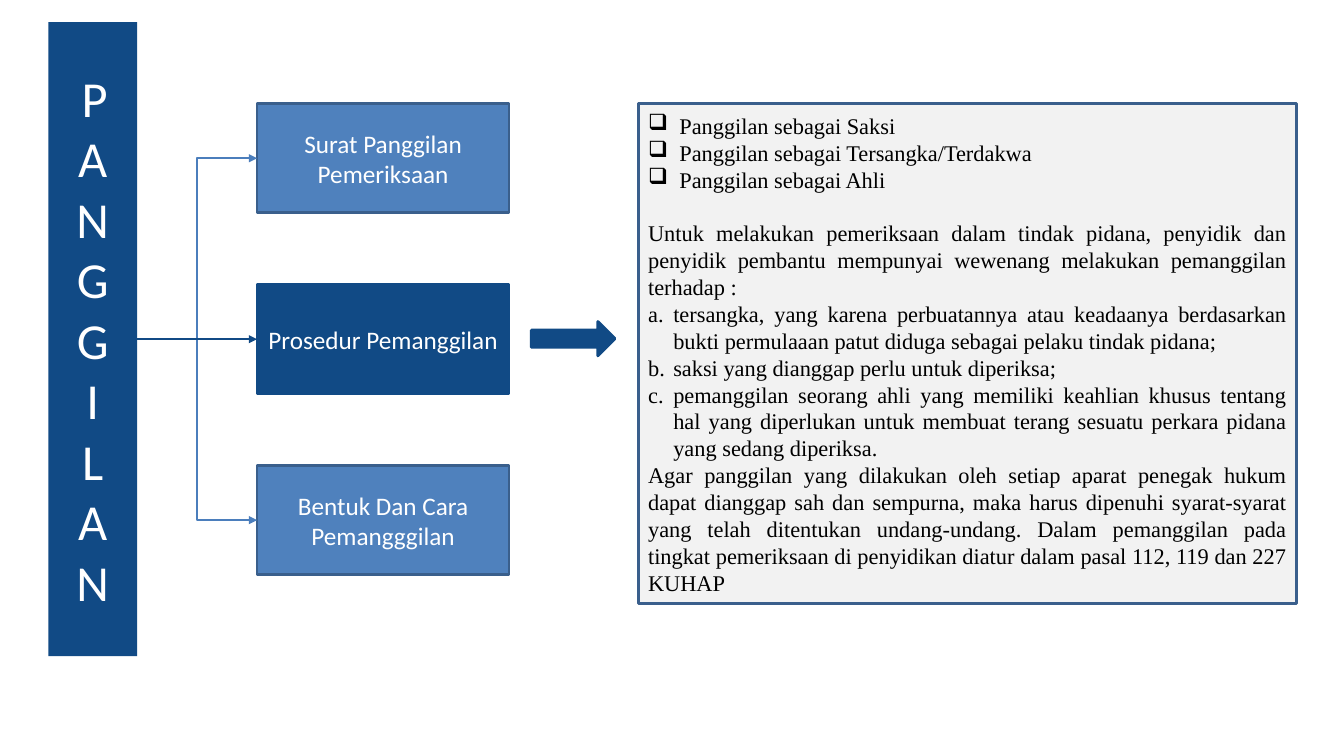
from lxml import etree
from pptx import Presentation
from pptx import util as u
from pptx.dml.color import RGBColor
from pptx.enum import shapes, text
from pptx.oxml import ns

NAVY = RGBColor(0x11, 0x4A, 0x85)
BLUE = RGBColor(0x4F, 0x81, 0xBD)
EDGE = RGBColor(0x3A, 0x5F, 0x8C)
WIRE = RGBColor(0x4B, 0x7E, 0xBC)
PALE = RGBColor(0xF2, 0xF2, 0xF2)
WHITE = RGBColor(0xFF, 0xFF, 0xFF)
BLACK = RGBColor(0, 0, 0)

STEPS = [
    ("Surat Panggilan Pemeriksaan", BLUE, EDGE, WIRE),
    ("Bentuk Dan Cara Pemangggilan", BLUE, EDGE, WIRE),
    ("Prosedur Pemanggilan", NAVY, NAVY, NAVY),
]
ROWS = [0, 2, 1]
CHECK = ("buChar", "char", "❑", 0.31)
LETTER = ("buAutoNum", "type", "alphaLcPeriod", 0.25)
NOTES = [
    (CHECK, "Panggilan sebagai Saksi"),
    (CHECK, "Panggilan sebagai Tersangka/Terdakwa"),
    (CHECK, "Panggilan sebagai Ahli"),
    (None, "Untuk melakukan pemeriksaan dalam tindak pidana, penyidik dan penyidik "
           "pembantu mempunyai wewenang melakukan pemanggilan terhadap :"),
    (LETTER, "tersangka, yang karena perbuatannya atau keadaanya berdasarkan bukti "
             "permulaaan patut diduga sebagai pelaku tindak pidana;"),
    (LETTER, "saksi yang dianggap perlu untuk diperiksa;"),
    (LETTER, "pemanggilan seorang ahli yang memiliki keahlian khusus tentang hal yang "
             "diperlukan untuk membuat terang sesuatu perkara pidana yang sedang diperiksa."),
    (None, "Agar panggilan yang dilakukan oleh setiap aparat penegak hukum dapat dianggap "
           "sah dan sempurna, maka harus dipenuhi syarat-syarat yang telah ditentukan "
           "undang-undang. Dalam pemanggilan pada tingkat pemeriksaan di penyidikan diatur "
           "dalam pasal 112, 119 dan 227 KUHAP"),
]


def add_block(slide, kind, box, fill, edge=None):
    """Add a flat filled shape in a box given in inches."""
    block = slide.shapes.add_shape(kind, *map(u.Inches, box))
    block.shadow.inherit = False
    block.fill.solid()
    block.fill.fore_color.rgb = fill
    if edge is None:
        block.line.fill.background()
    else:
        block.line.color.rgb = edge
        block.line.width = u.Pt(2)
    block.text_frame.word_wrap = True
    block.text_frame.vertical_anchor = text.MSO_ANCHOR.MIDDLE
    return block


def set_style(para, face, size, color, align):
    """Set the font and alignment of a paragraph."""
    para.alignment = align
    para.font.name = face
    para.font.size = u.Pt(size)
    para.font.color.rgb = color


def add_label(block, words, size):
    """Write a centred white label in a block."""
    para = block.text_frame.paragraphs[0]
    para.text = words
    set_style(para, "Calibri", size, WHITE, text.PP_ALIGN.CENTER)


def add_bar(slide, box):
    """Add the upright title bar."""
    bar = add_block(slide, shapes.MSO_SHAPE.RECTANGLE, box, NAVY)
    add_label(bar, "PANGGILAN", 36)
    frame = bar.text_frame
    frame.vertical_anchor = text.MSO_ANCHOR.TOP
    frame.auto_size = text.MSO_AUTO_SIZE.SHAPE_TO_FIT_TEXT
    frame._txBody.bodyPr.set("vert", "wordArtVert")
    return bar


def add_wire(slide, start, end, kind, color):
    """Join the right side of one block to the left side of another."""
    wire = slide.shapes.add_connector(kind, 0, 0, 0, 0)
    wire.begin_connect(start, 3)
    wire.end_connect(end, 1)
    wire.line.color.rgb = color
    wire.line.width = u.Pt(1.5)
    etree.SubElement(wire.line._get_or_add_ln(), ns.qn("a:tailEnd"), type="triangle")
    etree.SubElement(wire._element.spPr, ns.qn("a:effectLst"))


def add_steps(slide, bar, box):
    """Stack three steps evenly in a box and wire them to the bar."""
    left, top, width, height = box
    tall = 1.08
    pitch = (height - tall) / 2
    for row, (words, fill, edge, color) in zip(ROWS, STEPS):
        step = add_block(slide, shapes.MSO_SHAPE.RECTANGLE,
                         (left, top + row * pitch, width, tall), fill, edge)
        add_label(step, words, 18)
        kind = shapes.MSO_CONNECTOR.STRAIGHT if row == 1 else shapes.MSO_CONNECTOR.ELBOW
        add_wire(slide, bar, step, kind, color)


def add_mark(para, mark):
    """Give a paragraph a hanging bullet or letter."""
    tag, key, value, indent = mark
    props = para._p.get_or_add_pPr()
    props.set("marL", str(u.Inches(indent)))
    props.set("indent", str(-u.Inches(indent)))
    etree.SubElement(props, ns.qn("a:" + tag), {key: value})


def add_notes(slide, box):
    """Add the framed panel of notes."""
    panel = add_block(slide, shapes.MSO_SHAPE.RECTANGLE, box, PALE, EDGE)
    frame = panel.text_frame
    last = None
    for index, (mark, words) in enumerate(NOTES):
        para = frame.add_paragraph() if index else frame.paragraphs[0]
        para.text = words
        if mark:
            add_mark(para, mark)
        elif last is CHECK:
            para.space_before = u.Pt(19.2)
        set_style(para, "Times New Roman", 16, BLACK, text.PP_ALIGN.JUSTIFY)
        last = mark


def main():
    """Build and save the slide."""
    deck = Presentation()
    deck.slide_width, deck.slide_height = u.Inches(13.33), u.Inches(7.5)
    slide = deck.slides.add_slide(deck.slide_layouts[6])
    bar = add_bar(slide, (0.48, 0.22, 0.88, 6.29))
    add_steps(slide, bar, (2.55, 1.03, 2.5, 4.67))
    add_notes(slide, (6.33, 1.03, 6.53, 4.96))
    add_block(slide, shapes.MSO_SHAPE.RIGHT_ARROW, (5.27, 3.19, 0.83, 0.34), NAVY, NAVY)
    deck.save("out.pptx")


if __name__ == "__main__":
    main()
